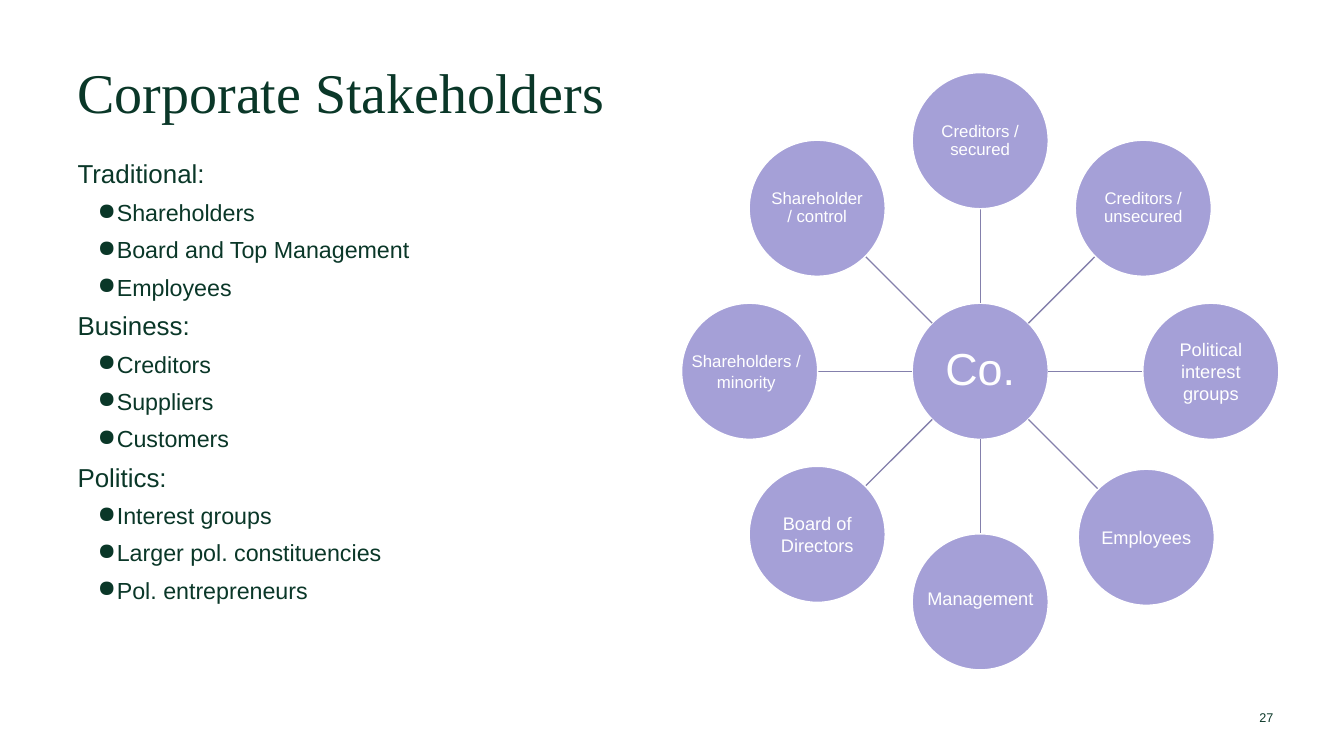
import math

import pptx
import pptx.dml.color
import pptx.enum.shapes
import pptx.enum.text
import pptx.oxml
import pptx.oxml.ns
import pptx.util

DARK_GREEN = pptx.dml.color.RGBColor(0x0A, 0x37, 0x28)
LILAC = pptx.dml.color.RGBColor(0xA5, 0xA0, 0xD7)
SPOKE_PURPLE = pptx.dml.color.RGBColor(0x84, 0x80, 0xAC)
WHITE = pptx.dml.color.RGBColor(0xFF, 0xFF, 0xFF)

ALIGN = pptx.enum.text.PP_ALIGN
ANCHOR = pptx.enum.text.MSO_ANCHOR
COLUMNS, ROWS = 32, 18

GROUPS = {
    "Traditional:": ["Shareholders", "Board and Top Management", "Employees"],
    "Business:": ["Creditors", "Suppliers", "Customers"],
    "Politics:": ["Interest groups", "Larger pol. constituencies", "Pol. entrepreneurs"],
}

HUB = (23.34, 8.84)
RADIUS = 1.62
ORBIT = 5.49
LABEL_SIDE = 2.28
STAKEHOLDERS = [
    {"text": "Creditors / secured", "size": 12, "spacing": 0.9},
    {"text": "Creditors / unsecured", "size": 12, "spacing": 0.9},
    {"text": "Political interest groups"},
    {"text": "Employees", "orbit": 5.59},
    {"text": "Management", "width": 3, "shift": (0, -0.08)},
    {"text": "Board of Directors"},
    {"text": "Shareholders / minority", "size": 12, "width": 3, "shift": (-0.08, 0)},
    {"text": "Shareholder / control", "size": 12, "spacing": 0.9},
]


class StakeholderSlide:
    """Draws styled elements on one slide, placed by grid columns and rows."""

    def __init__(self, presentation):
        self.slide = presentation.slides.add_slide(presentation.slide_layouts[6])
        self.column = presentation.slide_width / COLUMNS
        self.row = presentation.slide_height / ROWS

    def place(self, columns, rows):
        return round(columns * self.column), round(rows * self.row)

    def apply(self, target, values):
        for name, value in values.items():
            setattr(target, name, value)

    def text_frame(self, left, top, width, height, **values):
        box = self.slide.shapes.add_textbox(*self.place(left, top), *self.place(width, height))
        self.apply(box.text_frame, {"word_wrap": True, **values})
        return box.text_frame

    def fill_paragraph(self, paragraph, text, size, color=DARK_GREEN, font="Arial", **values):
        self.apply(paragraph, values)
        run = paragraph.add_run()
        run.text = text
        self.apply(run.font, {"name": font, "size": pptx.util.Pt(size)})
        run.font.color.rgb = color

    def text(self, text, size, box, anchor=ANCHOR.MIDDLE, inset=0, **values):
        sides = ("margin_left", "margin_top", "margin_right", "margin_bottom")
        margins = dict.fromkeys(sides, pptx.util.Inches(inset))
        frame = self.text_frame(*box, vertical_anchor=anchor, **margins)
        self.fill_paragraph(frame.paragraphs[0], text, size, **values)

    def outline(self, groups, box):
        frame = self.text_frame(*box)
        spacing = {"line_spacing": 0.88, "space_before": pptx.util.Pt(9)}
        paragraph = frame.paragraphs[0]
        for heading, items in groups.items():
            if paragraph.runs:
                paragraph = frame.add_paragraph()
            self.fill_paragraph(paragraph, heading, 18.5, **spacing)
            for item in items:
                paragraph = frame.add_paragraph()
                self.fill_paragraph(paragraph, item, 16.6, level=1, **spacing)
                self.bullet(paragraph)

    def bullet(self, paragraph):
        properties = paragraph._p.get_or_add_pPr()
        properties.set("marL", str(pptx.util.Inches(0.39)))
        properties.set("indent", str(pptx.util.Inches(-0.19)))
        namespace = pptx.oxml.ns.nsdecls("a")
        properties.append(pptx.oxml.parse_xml(f'<a:buChar {namespace} char="●"/>'))

    def circle(self, center):
        corner = [middle - RADIUS for middle in center]
        shape = self.slide.shapes.add_shape(
            pptx.enum.shapes.MSO_SHAPE.OVAL,
            *self.place(*corner), *self.place(2 * RADIUS, 2 * RADIUS))
        shape.shadow.inherit = False
        shape.fill.solid()
        shape.fill.fore_color.rgb = LILAC
        shape.line.color.rgb = WHITE
        shape.line.width = pptx.util.Pt(1)

    def spoke(self, start, end):
        connector = self.slide.shapes.add_connector(
            pptx.enum.shapes.MSO_CONNECTOR.STRAIGHT, *self.place(*start), *self.place(*end))
        connector.line.color.rgb = SPOKE_PURPLE
        connector.line.width = pptx.util.Pt(1)
        namespace = pptx.oxml.ns.nsdecls("a")
        connector._element.spPr.append(pptx.oxml.parse_xml(f"<a:effectLst {namespace}/>"))

    def label(self, center, text, size=13, spacing=1.0, width=LABEL_SIDE, shift=(0, 0)):
        left = center[0] + shift[0] - width / 2
        top = center[1] + shift[1] - LABEL_SIDE / 2
        self.text(text, size, (left, top, width, LABEL_SIDE), color=WHITE,
                  alignment=ALIGN.CENTER, line_spacing=spacing)

    def wheel(self, hub_text, stakeholders):
        self.circle(HUB)
        self.label(HUB, hub_text, size=32, spacing=0.9)
        for index, stakeholder in enumerate(stakeholders):
            style = dict(stakeholder)
            orbit = style.pop("orbit", ORBIT)
            angle = math.tau * index / len(stakeholders) - math.pi / 2

            def point(distance):
                return (HUB[0] + distance * math.cos(angle), HUB[1] + distance * math.sin(angle))

            self.spoke(point(RADIUS), point(orbit - RADIUS))
            self.circle(point(orbit))
            self.label(point(orbit), **style)


def main():
    presentation = pptx.Presentation()
    presentation.slide_width = pptx.util.Inches(13.33)
    presentation.slide_height = pptx.util.Inches(7.5)
    page = StakeholderSlide(presentation)
    page.text("27", 9, (28.95, 16.82, 1.37, 0.55), alignment=ALIGN.RIGHT)
    page.text("Corporate Stakeholders", 40, (1.61, 1.32, 29.95, 1.7), anchor=ANCHOR.TOP,
              inset=0.1, font="Times New Roman", line_spacing=0.9)
    page.outline(GROUPS, (1.61, 3.74, 23.57, 11.52))
    page.wheel("Co.", STAKEHOLDERS)
    presentation.save("out.pptx")


if __name__ == "__main__":
    main()
